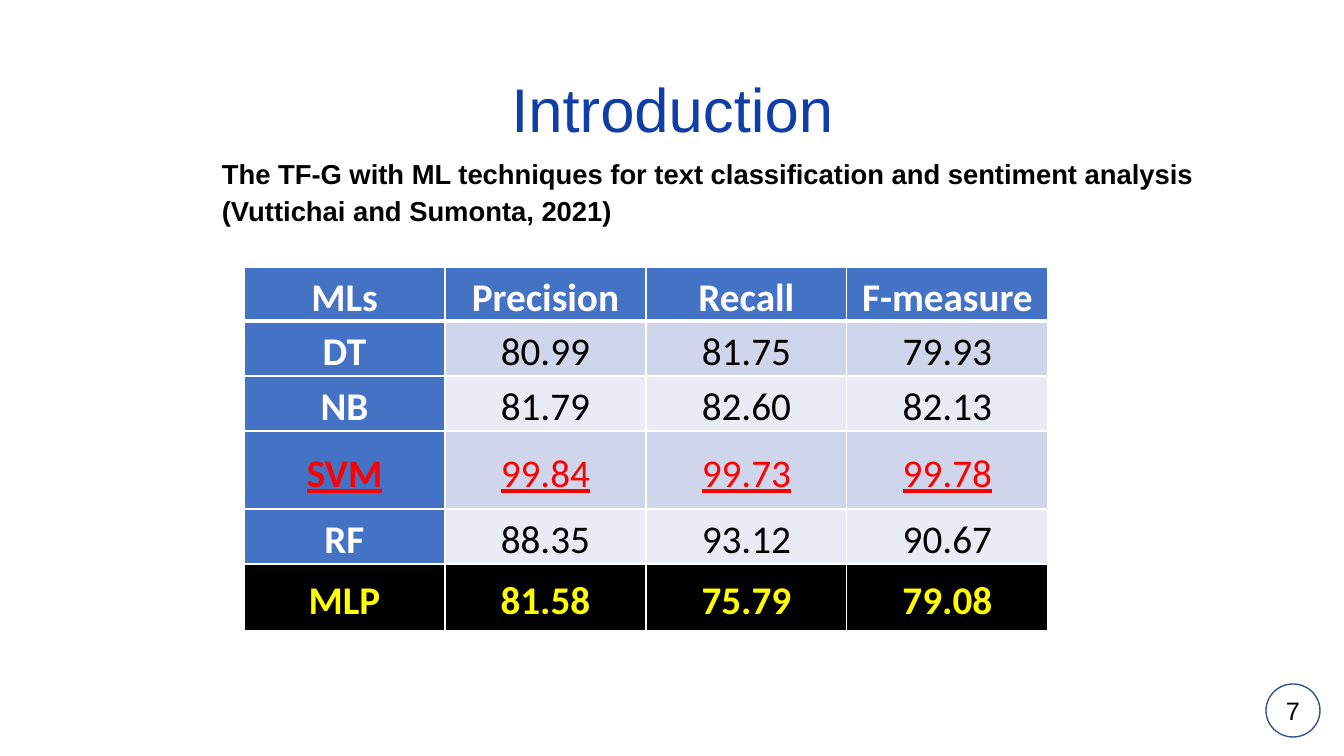
from lxml.etree import SubElement
from pptx import Presentation
from pptx.dml.color import RGBColor
from pptx.enum.shapes import MSO_SHAPE
from pptx.enum.text import MSO_ANCHOR as ANCHOR, PP_ALIGN as ALIGN
from pptx.oxml.ns import qn
from pptx.util import Emu, Pt

WHITE = RGBColor(0xFF, 0xFF, 0xFF)
BLACK = RGBColor(0, 0, 0)
TITLE_BLUE = RGBColor(0x10, 0x3E, 0xA7)
RING_BLUE = RGBColor(0x32, 0x54, 0x91)
HEAD_BLUE = RGBColor(0x44, 0x72, 0xC4)
BAND_DARK = RGBColor(0xCF, 0xD5, 0xEA)
BAND_LIGHT = RGBColor(0xE9, 0xEB, 0xF5)
RED = RGBColor(0xFF, 0, 0)
YELLOW = RGBColor(0xFF, 0xFF, 0)

SCORES = [
    ("MLs", "Precision", "Recall", "F-measure"),
    ("DT", "80.99", "81.75", "79.93"),
    ("NB", "81.79", "82.60", "82.13"),
    ("SVM", "99.84", "99.73", "99.78"),
    ("RF", "88.35", "93.12", "90.67"),
    ("MLP", "81.58", "75.79", "79.08"),
]
ROW_HEIGHTS = [54, 55, 55, 78, 55, 67]
BEST, PROPOSED = "SVM", "MLP"


def px(n):
    return Emu(round(n * 914400 / 100.8))


def set_font(p, size, color, name="Arial", bold=False):
    f = p.font
    f.name, f.size, f.bold = name, Pt(size), bold
    f.color.rgb = color


def add_text(s, box, lines, size, color, bold=False, align=ALIGN.LEFT,
             anchor=ANCHOR.TOP, spacing=1.0, gap=0):
    tf = s.shapes.add_textbox(*map(px, box)).text_frame
    tf.word_wrap = True
    tf.vertical_anchor = anchor
    for i, line in enumerate(lines):
        p = tf.add_paragraph() if i else tf.paragraphs[0]
        p.text = line
        p.alignment = align
        p.line_spacing = spacing
        p.space_before = Pt(gap if i else 0)
        set_font(p, size, color, bold=bold)


def add_page_number(s, box, number):
    sp = s.shapes.add_shape(MSO_SHAPE.OVAL, *map(px, box))
    sp.shadow.inherit = False
    sp.fill.solid()
    sp.fill.fore_color.rgb = WHITE
    sp.line.color.rgb = RING_BLUE
    sp.line.width = Pt(1)
    tf = sp.text_frame
    tf.vertical_anchor = ANCHOR.MIDDLE
    tf.margin_left = tf.margin_right = 0
    p = tf.paragraphs[0]
    p.text = number
    p.alignment = ALIGN.CENTER
    set_font(p, 18, BLACK)


def set_borders(cell, top, bottom):
    """Draw white borders; call before the fill, which must follow them."""
    tc_pr = cell._tc.get_or_add_tcPr()
    for side, width in (("L", 1), ("R", 1), ("T", top), ("B", bottom)):
        ln = SubElement(tc_pr, qn(f"a:ln{side}"), w=str(Pt(width)))
        fill = SubElement(ln, qn("a:solidFill"))
        SubElement(fill, qn("a:srgbClr"), val=str(WHITE))


def cell_colors(row, col):
    """Return the fill and the text colour of a cell."""
    name = SCORES[row][0]
    if name == PROPOSED:
        return BLACK, YELLOW
    is_head = row == 0 or col == 0
    fill = HEAD_BLUE if is_head else BAND_DARK if row % 2 else BAND_LIGHT
    if name == BEST:
        return fill, RED
    return fill, WHITE if is_head else BLACK


def add_score_table(s, left, top, width):
    cols = len(SCORES[0])
    box = (left, top, width, sum(ROW_HEIGHTS))
    table = s.shapes.add_table(len(SCORES), cols, *map(px, box)).table
    for column in table.columns:
        column.width = px(width // cols)
    for r, values in enumerate(SCORES):
        table.rows[r].height = px(ROW_HEIGHTS[r])
        for c, value in enumerate(values):
            cell = table.cell(r, c)
            fill, color = cell_colors(r, c)
            set_borders(cell, 3 if r == 1 else 1, 3 if r == 0 else 1)
            cell.fill.solid()
            cell.fill.fore_color.rgb = fill
            cell.margin_left = cell.margin_right = px(7)
            cell.margin_top = cell.margin_bottom = 0
            cell.vertical_anchor = ANCHOR.MIDDLE if r else ANCHOR.TOP
            p = cell.text_frame.paragraphs[0]
            p.text = value
            p.alignment = ALIGN.CENTER
            p.line_spacing = 1.15
            bold = r == 0 or c == 0 or values[0] == PROPOSED
            set_font(p, 28, color, "Calibri", bold)
            p.font.underline = values[0] == BEST


def main():
    prs = Presentation()
    prs.slide_width, prs.slide_height = px(1344), px(756)
    s = prs.slides.add_slide(prs.slide_layouts[6])
    add_page_number(s, (1266, 684, 54, 53), "7")
    add_text(s, (93, 40, 1159, 146), ["Introduction"], 44, TITLE_BLUE,
             align=ALIGN.CENTER, anchor=ANCHOR.MIDDLE, spacing=0.9)
    add_text(s, (212, 161, 1093, 94),
             ["The TF-G with ML techniques for text classification and sentiment analysis",
              "(Vuttichai and Sumonta, 2021)"],
             19.6, BLACK, bold=True, spacing=0.7, gap=10)
    add_score_table(s, 244, 267, 804)
    prs.save("out.pptx")


if __name__ == "__main__":
    main()
